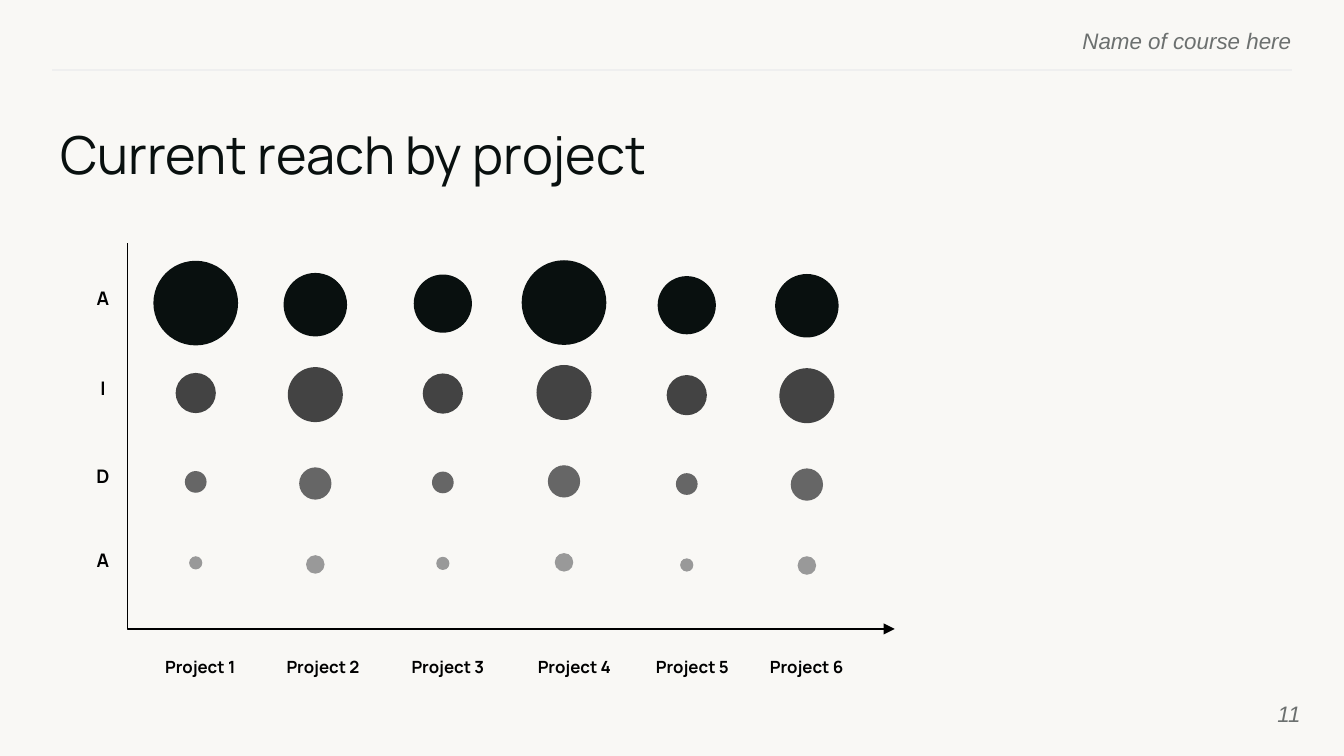
from lxml import etree
from pptx import Presentation
from pptx import util as u
from pptx.dml.color import RGBColor
from pptx.enum import shapes as sh, text as tx
from pptx.oxml import ns

PAPER = RGBColor(0xF9, 0xF8, 0xF5)
INK = RGBColor(0x09, 0x10, 0x0F)
BLACK = RGBColor(0, 0, 0)
GREY = RGBColor(0x6C, 0x70, 0x6F)
RULE = RGBColor(0xEF, 0xEF, 0xEF)
TONES = [INK, RGBColor(0x43, 0x43, 0x43),
         RGBColor(0x66, 0x66, 0x66), RGBColor(0x99, 0x99, 0x99)]

SIDE = tx.PP_ALIGN
TITLE = {"name": "Manrope", "size": u.Pt(28)}
NOTE = {"name": "Arial", "size": u.Pt(12), "italic": True}
STAGE = {"name": "Manrope", "size": u.Pt(10), "bold": True}
LABEL = {**STAGE, "size": u.Pt(9)}
TIGHT = {"alignment": SIDE.CENTER, "line_spacing": 1.5}
RIGHT = {"alignment": SIDE.RIGHT}

STAGES = [("A", 0.56, 1.15), ("I", 2.26, 2.85), ("D", 3.93, 4.53), ("A", 5.51, 6.06)]
SPOTS = [
    (1.29, 1.37, -0.02, (1.6, 0.76, 0.41, 0.25)),
    (3.55, 3.69, 0.01, (1.2, 1.04, 0.61, 0.35)),
    (5.96, 6.05, -0.01, (1.1, 0.76, 0.41, 0.25)),
    (8.25, 8.44, -0.03, (1.6, 1.04, 0.61, 0.35)),
    (10.57, 10.67, 0.02, (1.1, 0.76, 0.41, 0.25)),
    (12.84, 12.83, 0.03, (1.2, 1.04, 0.61, 0.35)),
]


def apply(item, form):
    """Set every attribute named in a dict of format values."""
    for key, val in form.items():
        setattr(item, key, val)


def cms(*nums):
    """Turn numbers into centimetre lengths."""
    return [u.Cm(num) for num in nums]


def write(shape, words, font, para, hue, pad=(0, 0), mid=False):
    """Fill a shape with one formatted paragraph."""
    frame = shape.text_frame
    side, top = cms(*pad)
    apply(frame, {
        "margin_left": side, "margin_right": side,
        "margin_top": top, "margin_bottom": top,
        "word_wrap": True, "auto_size": tx.MSO_AUTO_SIZE.NONE,
        "vertical_anchor": tx.MSO_ANCHOR.MIDDLE if mid else tx.MSO_ANCHOR.TOP,
    })
    line = frame.paragraphs[0]
    apply(line, para)
    run = line.add_run()
    run.text = words
    apply(run.font, font)
    run.font.color.rgb = hue


def label(slide, box, words, font):
    """Add a centred bold chart label."""
    write(slide.shapes.add_textbox(*cms(*box)), words, font, TIGHT, BLACK, (0.1, 0.05))


def header(slide, box):
    """Place the course name above a thin rule."""
    left, top, wide, high = box
    name = slide.shapes.add_textbox(*cms(left + wide - 9.78, top, 9.78, 0.46))
    write(name, "Name of course here", NOTE, RIGHT, GREY)
    rule = slide.shapes.add_connector(
        sh.MSO_CONNECTOR.STRAIGHT, *cms(left + wide, top + high, left, top + high))
    rule.line.color.rgb = RULE
    rule.line.width = u.Pt(0.75)
    etree.SubElement(rule._element.spPr, ns.qn("a:effectLst"))


def heading(slide, box):
    """Move and fill the title placeholder."""
    title = slide.shapes.title
    apply(title, dict(zip(("left", "top", "width", "height"), cms(*box))))
    para = {"alignment": SIDE.LEFT, "space_after": u.Pt(10)}
    write(title, "Current reach by project", TITLE, para, INK)


def axes(slide, box):
    """Draw both axes as one open line with an arrowhead."""
    left, top, wide, high = box
    pen = slide.shapes.build_freeform(*cms(left, top))
    ends = [(left, top + high), (left + wide, top + high)]
    pen.add_line_segments([cms(*end) for end in ends], close=False)
    axis = pen.convert_to_shape()
    axis.shadow.inherit = False
    axis.fill.background()
    axis.line.color.rgb = BLACK
    axis.line.width = u.Pt(0.75)
    etree.SubElement(axis.line._get_or_add_ln(), ns.qn("a:tailEnd"), type="triangle")


def bubble(slide, mid, row, size, tone):
    """Add a filled circle around a centre point."""
    dot = slide.shapes.add_shape(
        sh.MSO_SHAPE.OVAL, *cms(mid - size / 2, row - size / 2, size, size))
    dot.shadow.inherit = False
    dot.fill.solid()
    dot.fill.fore_color.rgb = tone
    dot.line.fill.background()


def plot(slide, box):
    """Place axes, labels and the grid of bubbles."""
    left, top, wide, high = box
    axes(slide, box)
    for word, edge, mid in STAGES:
        label(slide, (left - 1.24, top + edge, 1.55, 0.84), word, STAGE)
    for num, (mid, tag, shift, sizes) in enumerate(SPOTS, 1):
        spot = (left + tag - 0.96, top + high + 0.28, 1.93, 0.58)
        label(slide, spot, f"Project {num}", LABEL)
        for (word, edge, row), size, tone in zip(STAGES, sizes, TONES):
            bubble(slide, left + mid, top + row + shift, size, tone)


def number(slide, box):
    """Place the page number."""
    write(slide.shapes.add_textbox(*cms(*box)), "11", NOTE, RIGHT, GREY, mid=True)


def main():
    """Build and save the slide."""
    deck = Presentation()
    apply(deck, {"slide_width": u.Cm(25.4), "slide_height": u.Cm(14.29)})
    slide = deck.slides.add_slide(deck.slide_layouts[5])
    slide.background.fill.solid()
    slide.background.fill.fore_color.rgb = PAPER
    header(slide, (0.99, 0.51, 23.42, 0.81))
    heading(slide, (1.14, 2.31, 23.44, 1.3))
    plot(slide, (2.41, 4.6, 14.5, 7.29))
    number(slide, (23.06, 12.95, 1.52, 1.09))
    deck.save("out.pptx")


if __name__ == "__main__":
    main()
